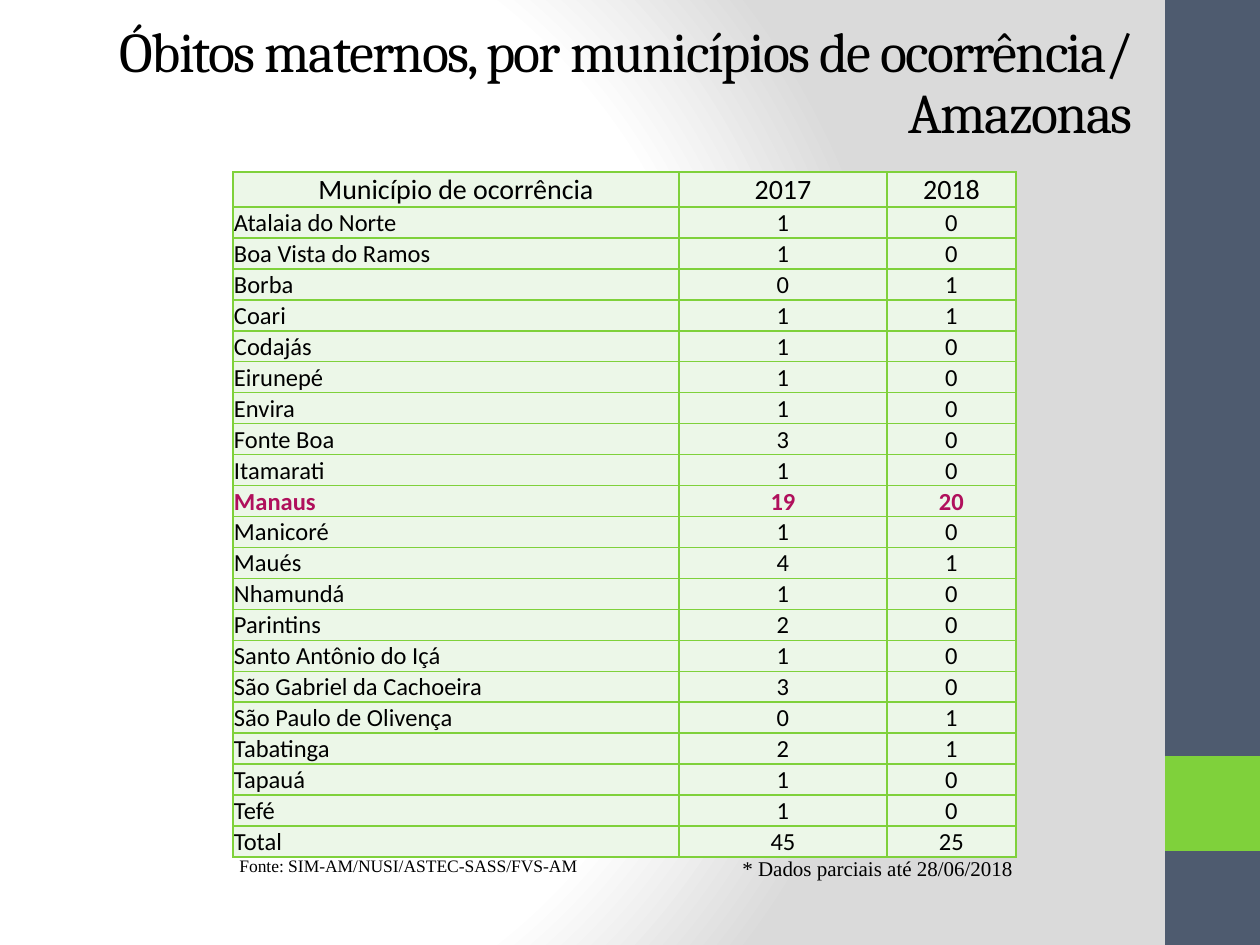
from lxml import etree
from pptx import Presentation
from pptx.dml.color import RGBColor
from pptx.enum.shapes import MSO_SHAPE
from pptx.enum.text import MSO_ANCHOR, MSO_AUTO_SIZE, PP_ALIGN
from pptx.oxml import parse_xml
from pptx.oxml.ns import nsdecls, qn
from pptx.util import Pt

PX = 914400 / 126
RECT = MSO_SHAPE.RECTANGLE
LEFT, CENTER, RIGHT = PP_ALIGN.LEFT, PP_ALIGN.CENTER, PP_ALIGN.RIGHT
MIDDLE, BOTTOM = MSO_ANCHOR.MIDDLE, MSO_ANCHOR.BOTTOM
FIT_SHAPE = MSO_AUTO_SIZE.SHAPE_TO_FIT_TEXT

BLACK, SLATE, GREEN, PALE, MAGENTA = "000000", "4E5B6F", "7FD13B", "ECF7E8", "B0105C"

HEADER = ("Município de ocorrência", 2017, 2018)
DEATHS = [
    ("Atalaia do Norte", 1, 0),
    ("Boa Vista do Ramos", 1, 0),
    ("Borba", 0, 1),
    ("Coari", 1, 1),
    ("Codajás", 1, 0),
    ("Eirunepé", 1, 0),
    ("Envira", 1, 0),
    ("Fonte Boa", 3, 0),
    ("Itamarati", 1, 0),
    ("Manaus", 19, 20),
    ("Manicoré", 1, 0),
    ("Maués", 4, 1),
    ("Nhamundá", 1, 0),
    ("Parintins", 2, 0),
    ("Santo Antônio do Içá", 1, 0),
    ("São Gabriel da Cachoeira", 3, 0),
    ("São Paulo de Olivença", 0, 1),
    ("Tabatinga", 2, 1),
    ("Tapauá", 1, 0),
    ("Tefé", 1, 0),
    ("Total", 45, 25),
]
HIGHLIGHT = "Manaus"
COLUMN_WIDTHS = (446, 208, 129)
HEADER_HEIGHT, ROW_HEIGHT = 35, 31


def px(length):
    return round(length * PX)


def rgb(color):
    return RGBColor.from_string(color)


def style(paragraph, font_name, size, color=BLACK, bold=False, align=LEFT):
    paragraph.alignment = align
    font = paragraph.font
    font.name, font.size, font.bold = font_name, Pt(size), bold
    font.color.rgb = rgb(color)


def paint_background(slide):
    """White glow at the left that fades to grey at the right."""
    stops = "".join(
        f'<a:gs pos="{pos * 1000}"><a:srgbClr val="{color}"/></a:gs>'
        for pos, color in ((0, "FFFFFF"), (75, "FFFFFF"), (100, "DADADA")))
    background = parse_xml(
        f'<p:bg {nsdecls("p", "a")}><p:bgPr><a:gradFill rotWithShape="1">'
        f'<a:gsLst>{stops}</a:gsLst><a:path path="circle">'
        '<a:fillToRect l="20000" t="50000" r="100000" b="50000"/></a:path>'
        '</a:gradFill><a:effectLst/></p:bgPr></p:bg>')
    slide.element.cSld.insert(0, background)


def add_side_band(slide, left, top, width, height):
    square_top = top + height * 4 // 5
    for y, h, color in ((top, height, SLATE), (square_top, width, GREEN)):
        band = slide.shapes.add_shape(RECT, px(left), px(y), px(width), px(h))
        band.shadow.inherit = False
        band.fill.solid()
        band.fill.fore_color.rgb = rgb(color)
        band.line.fill.background()


def add_title(slide, left, top, width, height):
    frame = slide.shapes.add_textbox(px(left), px(top), px(width), px(height)).text_frame
    frame.word_wrap = True
    frame.vertical_anchor = MIDDLE
    title = frame.paragraphs[0]
    title.text = "Óbitos maternos, por municípios de ocorrência/\vAmazonas"
    title.line_spacing = 0.9
    style(title, "Cambria", 32, align=RIGHT)
    for run in title.runs:
        run.font._element.set("spc", "-100")


def add_borders(cell):
    properties = cell._tc.get_or_add_tcPr()
    for index, side in enumerate(("a:lnL", "a:lnR", "a:lnT", "a:lnB")):
        line = etree.Element(qn(side), w=str(Pt(1)))
        fill = etree.SubElement(line, qn("a:solidFill"))
        etree.SubElement(fill, qn("a:srgbClr"), val=GREEN)
        properties.insert(index, line)


def fill_cell(cell, value, size, color, bold, align):
    cell.margin_left = cell.margin_right = cell.margin_top = px(1)
    cell.margin_bottom = 0
    cell.vertical_anchor = BOTTOM
    cell.fill.solid()
    cell.fill.fore_color.rgb = rgb(PALE)
    add_borders(cell)
    entry = cell.text_frame.paragraphs[0]
    entry.text = str(value)
    style(entry, "Calibri", size, color, bold, align)


def add_deaths_table(slide, left, top):
    records = [HEADER, *DEATHS]
    height = HEADER_HEIGHT + ROW_HEIGHT * len(DEATHS)
    table = slide.shapes.add_table(len(records), len(HEADER), px(left), px(top),
                                   px(sum(COLUMN_WIDTHS)), px(height)).table
    table.first_row = table.horz_banding = False
    for column, width in zip(table.columns, COLUMN_WIDTHS):
        column.width = px(width)
    for r, record in enumerate(records):
        is_header, is_highlight = r == 0, record[0] == HIGHLIGHT
        table.rows[r].height = px(HEADER_HEIGHT if is_header else ROW_HEIGHT)
        for c, value in enumerate(record):
            fill_cell(table.cell(r, c), value, 16 if is_header else 14,
                      MAGENTA if is_highlight else BLACK, is_highlight,
                      CENTER if is_header or c else LEFT)


def add_footnote(slide, text, size, left, top, width, height):
    frame = slide.shapes.add_textbox(px(left), px(top), px(width), px(height)).text_frame
    frame.word_wrap = False
    frame.auto_size = FIT_SHAPE
    note = frame.paragraphs[0]
    note.text = text
    style(note, "Times New Roman", size)


def main():
    deck = Presentation()
    deck.slide_width, deck.slide_height = px(1260), px(945)
    slide = deck.slides.add_slide(deck.slide_layouts[6])
    paint_background(slide)
    add_side_band(slide, 1165, 0, 95, 945)
    add_title(slide, -5, 6, 1150, 158)
    add_deaths_table(slide, 233, 172)
    add_footnote(slide, "Fonte: SIM-AM/NUSI/ASTEC-SASS/FVS-AM", 10, 227, 849, 367, 34)
    add_footnote(slide, "* Dados parciais até 28/06/2018", 12, 730, 849, 300, 38)
    deck.save("out.pptx")


if __name__ == "__main__":
    main()
